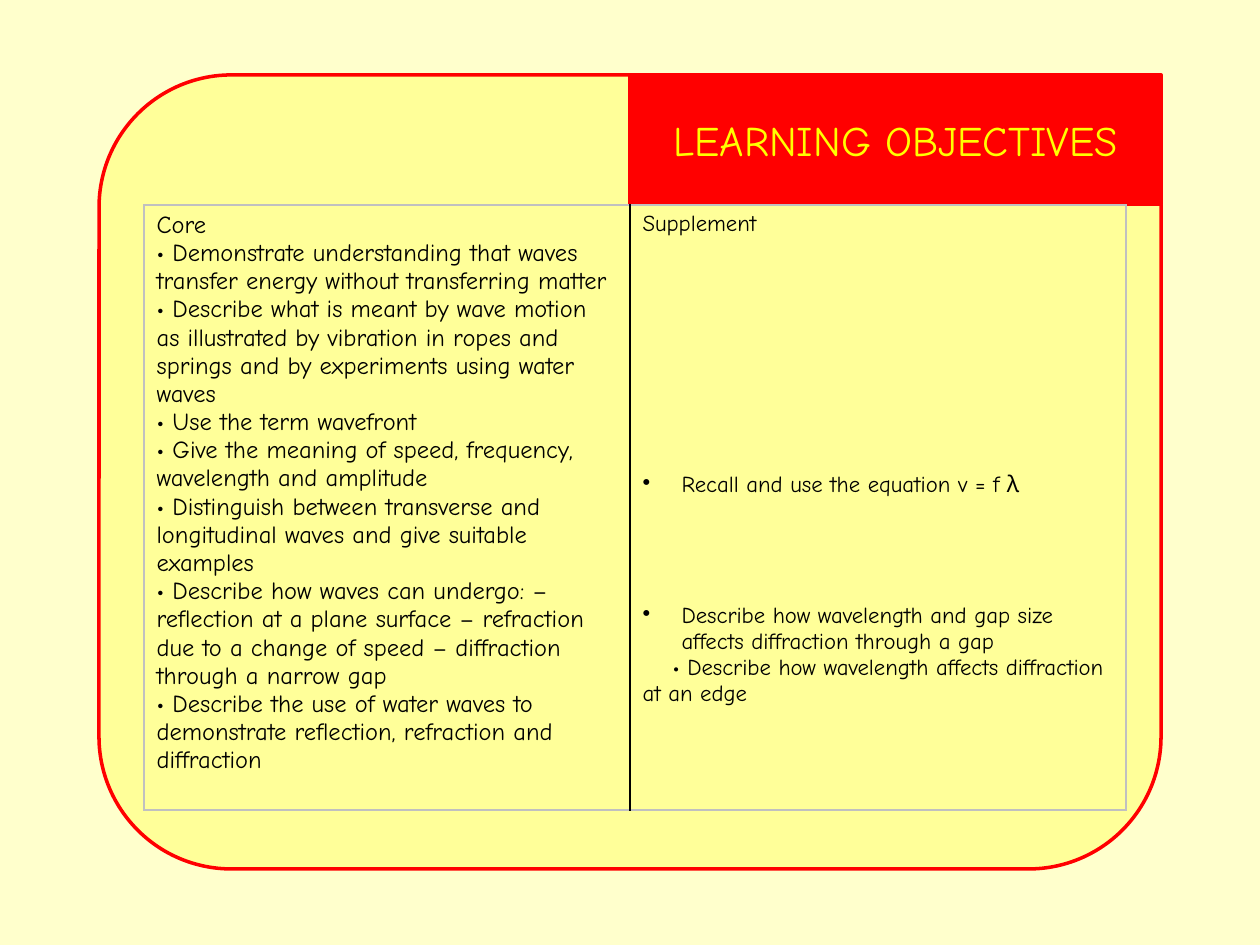
from pptx import Presentation
from pptx.dml.color import RGBColor
from pptx.enum.shapes import MSO_SHAPE
from pptx.enum.text import MSO_ANCHOR, PP_ALIGN
from pptx.oxml import parse_xml
from pptx.oxml.ns import nsdecls
from pptx.util import Emu, Pt

RECTANGLE = MSO_SHAPE.RECTANGLE
ROUNDED = MSO_SHAPE.ROUNDED_RECTANGLE
CENTER = PP_ALIGN.CENTER
MIDDLE = MSO_ANCHOR.MIDDLE
PX = 914400 / 126
RED, YELLOW, BLACK, GREY = "FF0000", "FFFF00", "000000", "C0C0C0"
CREAM, LEMON = "FFFFCC", "FFFF99"

CORE = [
    "Core",
    "• Demonstrate understanding that waves transfer energy without transferring matter",
    "• Describe what is meant by wave motion as illustrated by vibration in ropes and "
    "springs and by experiments using water waves",
    "• Use the term wavefront",
    "• Give the meaning of speed, frequency, wavelength and amplitude",
    "• Distinguish between transverse and longitudinal waves and give suitable examples",
    "• Describe how waves can undergo: – reflection at a plane surface – refraction due to "
    "a change of speed – diffraction through a narrow gap",
    "• Describe the use of water waves to demonstrate reflection, refraction and diffraction",
]
SUPPLEMENT = [
    "Supplement",
    "Recall and use the equation v = f λ",
    "Describe how wavelength and gap size affects diffraction through a gap",
    "• Describe how wavelength affects diffraction at an edge",
]


def px(length):
    """Turn pixels into EMU."""
    return Emu(round(length * PX))


def color(value):
    """Turn a hex string into a colour."""
    return RGBColor.from_string(value)


class SlideBuilder:
    """Hold the text style and the current slide."""

    def __init__(self, page, font):
        self.page = page
        self.font = font

    def background(self, fill):
        """Fill the slide background."""
        self.page.background.fill.solid()
        self.page.background.fill.fore_color.rgb = color(fill)

    def paint(self, shape, fill, line=None):
        """Set the fill and outline of a shape."""
        shape.fill.solid()
        shape.fill.fore_color.rgb = color(fill)
        if line:
            shape.line.color.rgb = color(line)
            shape.line.width = Pt(2)
        else:
            shape.line.fill.background()

    def panel(self, kind, left, top, width, height, fill, line=None):
        """Add a plain shape without a shadow."""
        shape = self.page.shapes.add_shape(kind, px(left), px(top), px(width), px(height))
        shape.shadow.inherit = False
        self.paint(shape, fill, line)

    def style(self, para, size, ink):
        """Format every run of a paragraph."""
        for span in para.runs:
            span.font.name = self.font
            span.font.size = Pt(size)
            span.font.color.rgb = color(ink)

    def title(self, text, left, top, width, height):
        """Place the title in front as a red rounded box."""
        box = self.page.shapes.title
        box.left, box.top, box.width, box.height = map(px, (left, top, width, height))
        box.element.spPr.append(parse_xml(
            f'<a:prstGeom {nsdecls("a")} prst="roundRect"><a:avLst/></a:prstGeom>'))
        self.paint(box, RED, RED)
        self.page.shapes.element.append(box.element)
        frame = box.text_frame
        frame.text = text
        frame.word_wrap = True
        frame.vertical_anchor = MIDDLE
        frame.paragraphs[0].alignment = CENTER
        self.style(frame.paragraphs[0], 24, YELLOW)

    def table(self, left, top, widths, height):
        """Add a one-row table and return its cells."""
        table = self.page.shapes.add_table(
            1, len(widths), px(left), px(top), px(sum(widths)), px(height)).table
        table.first_row = table.horz_banding = False
        for column, width in zip(table.columns, widths):
            column.width = px(width)
        return [table.cell(0, index) for index in range(len(widths))]

    def cell(self, cell, lines, size, borders):
        """Write paragraphs into a cell and draw its borders."""
        properties = cell._tc.get_or_add_tcPr()
        for side, ink in zip("LRTB", borders):
            properties.append(parse_xml(
                f'<a:ln{side} {nsdecls("a")} w="12700"><a:solidFill>'
                f'<a:srgbClr val="{ink}"/></a:solidFill></a:ln{side}>'))
        cell.fill.background()
        cell.text_frame.text = "\n".join(lines)
        for para in cell.text_frame.paragraphs:
            self.style(para, size, BLACK)
        return cell.text_frame.paragraphs

    def indent(self, para, margin, first, space=0, bullet=False):
        """Set the indents, space above and bullet of a paragraph."""
        para.space_before = Pt(space)
        properties = para._p.get_or_add_pPr()
        properties.set("marL", str(px(margin)))
        properties.set("indent", str(px(first)))
        if bullet:
            properties.append(parse_xml(f'<a:buChar {nsdecls("a")} char="•"/>'))


def main():
    """Build the learning objectives slide."""
    deck = Presentation()
    deck.slide_width, deck.slide_height = px(1260), px(945)
    page = deck.slides.add_slide(deck.slide_layouts[5])
    builder = SlideBuilder(page, "Comic Neue")
    builder.background(LEMON)
    builder.panel(RECTANGLE, 0, 0, 1260, 945, CREAM)
    builder.panel(ROUNDED, 99, 75, 1062, 794, LEMON, RED)
    builder.title("LEARNING OBJECTIVES", 630, 75, 531, 129)
    core, supplement = builder.table(144, 205, [486, 496], 605)
    builder.cell(core, CORE, 14, [GREY, BLACK, GREY, GREY])
    paras = builder.cell(supplement, SUPPLEMENT, 13, [BLACK, GREY, GREY, GREY])
    builder.indent(paras[1], 39, -39, space=134, bullet=True)
    builder.indent(paras[2], 39, -39, space=60, bullet=True)
    builder.indent(paras[3], 0, 30)
    deck.save("out.pptx")


if __name__ == "__main__":
    main()
